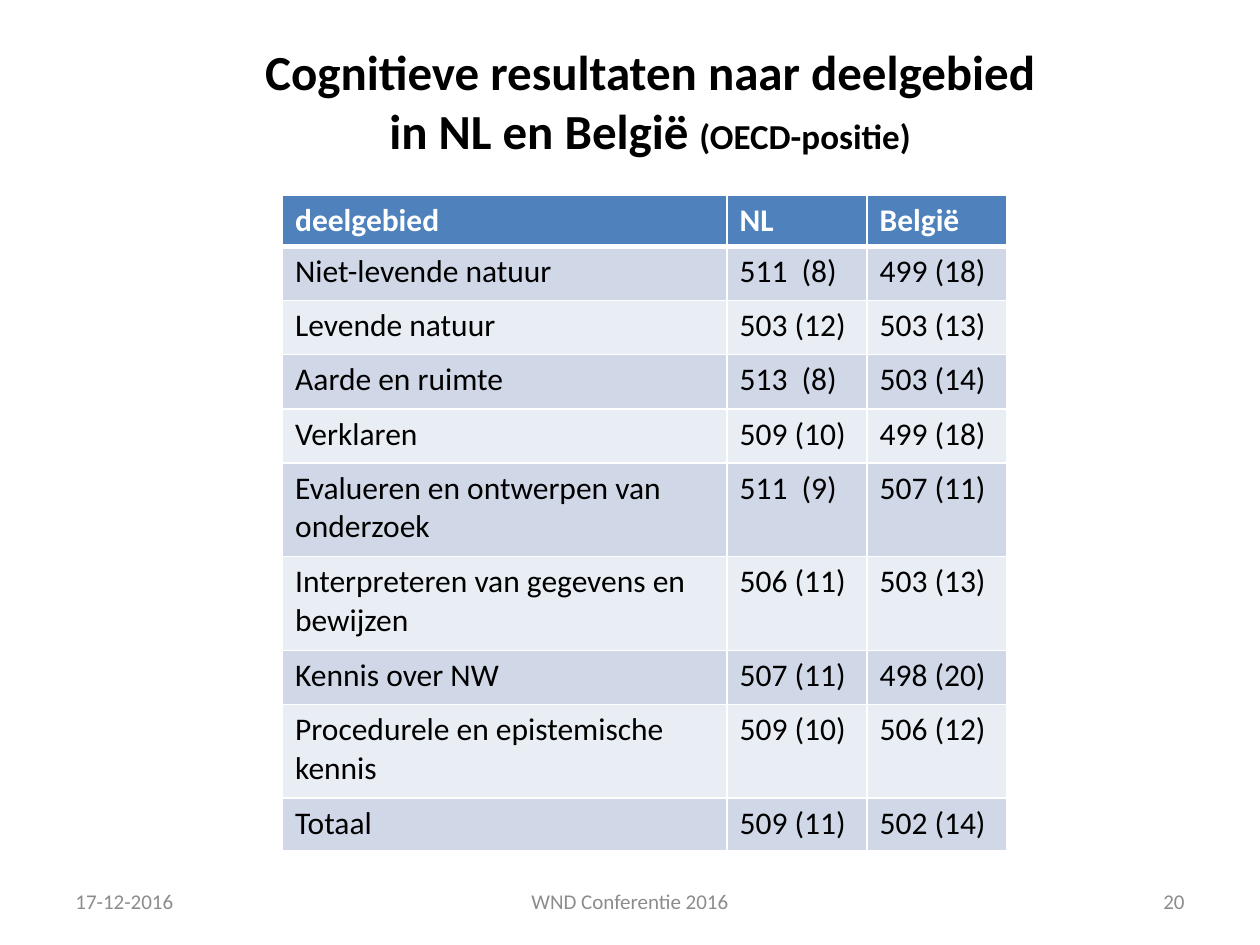
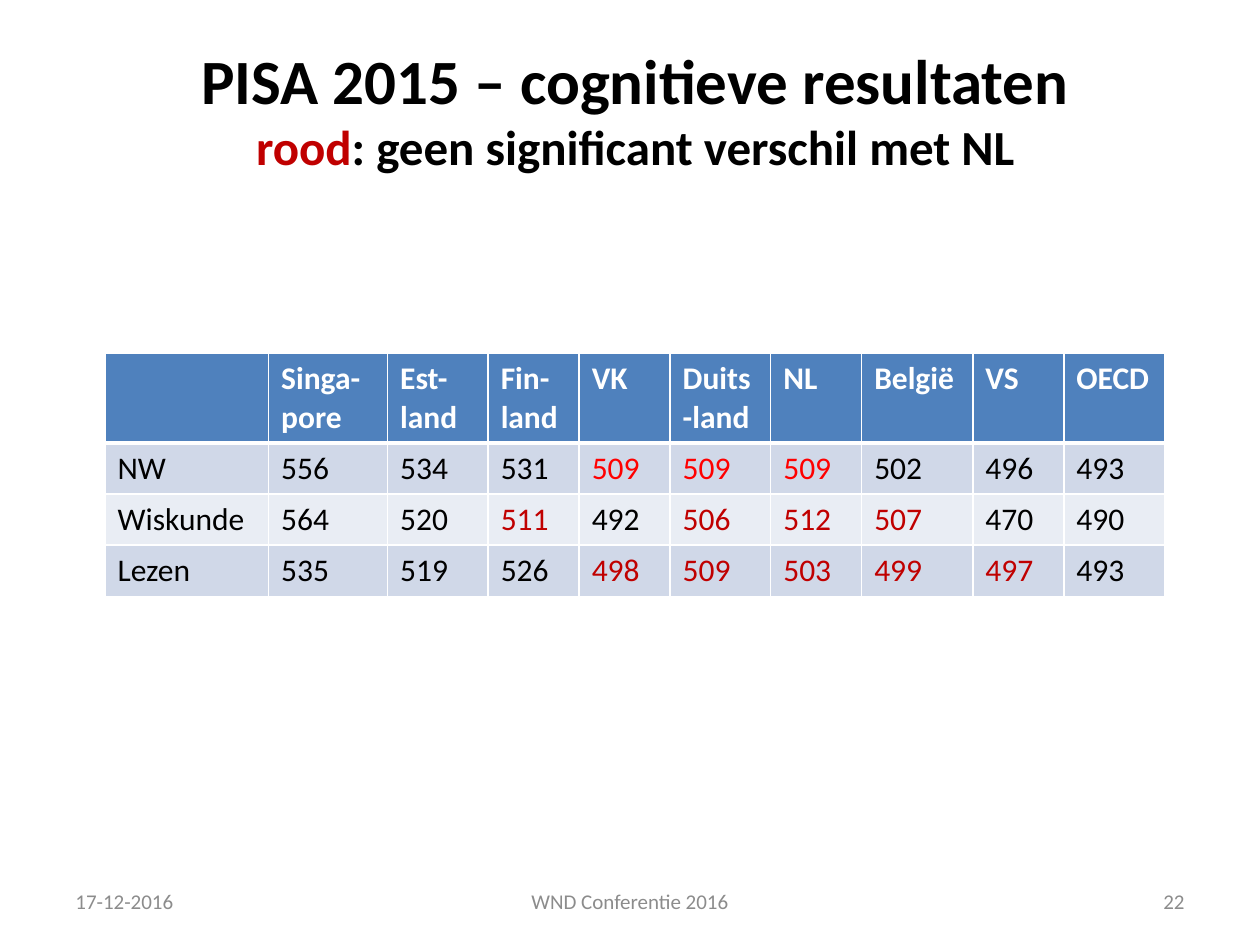
import pptx
import pptx.util
import pptx.dml.color
import pptx.enum.text
import pptx.oxml
import pptx.oxml.ns

Pt = pptx.util.Pt
RGB = pptx.dml.color.RGBColor
ALIGN = pptx.enum.text.PP_ALIGN
MIDDLE = pptx.enum.text.MSO_ANCHOR.MIDDLE
FIXED = pptx.enum.text.MSO_AUTO_SIZE.NONE

BLACK = RGB(0x00, 0x00, 0x00)
WHITE = RGB(0xFF, 0xFF, 0xFF)
GRAY = RGB(0x8C, 0x8C, 0x8C)
BLUE = RGB(0x4F, 0x81, 0xBD)
DARK = RGB(0xD0, 0xD8, 0xE8)
LIGHT = RGB(0xE9, 0xED, 0xF4)
RED = RGB(0xC0, 0x00, 0x00)
BRIGHT = RGB(0xFF, 0x00, 0x00)


def write(frame, text, size=18, color=BLACK, bold=False, align=ALIGN.LEFT, fresh=False):
    para = frame.add_paragraph() if fresh else frame.paragraphs[-1]
    para.alignment = align
    for index, line in enumerate(text.split("\n")):
        if index:
            para.add_line_break()
        if line:
            run = para.add_run()
            run.text = line
            run.font.name = "Calibri"
            run.font.size = Pt(size)
            run.font.bold = bold
            run.font.color.rgb = color


def edge(cell, row):
    props = cell._tc.get_or_add_tcPr()
    widths = {"L": 1, "R": 1, "T": 3 if row == 1 else 1, "B": 3 if row == 0 else 1}
    for side, width in widths.items():
        props.append(pptx.oxml.parse_xml(
            f'<a:ln{side} {pptx.oxml.ns.nsdecls("a")} w="{Pt(width)}">'
            f'<a:solidFill><a:srgbClr val="{WHITE}"/></a:solidFill></a:ln{side}>'))


areas = [
    ["deelgebied", "NL", "België"],
    ["Niet-levende natuur", "511  (8)", "499 (18)"],
    ["Levende natuur", "503 (12)", "503 (13)"],
    ["Aarde en ruimte", "513  (8)", "503 (14)"],
    ["Verklaren", "509 (10)", "499 (18)"],
    ["Evalueren en ontwerpen van onderzoek", "511  (9)", "507 (11)"],
    ["Interpreteren van gegevens en bewijzen", "506 (11)", "503 (13)"],
    ["Kennis over NW", "507 (11)", "498 (20)"],
    ["Procedurele en epistemische kennis", "509 (10)", "506 (12)"],
    ["Totaal", "509 (11)", "502 (14)"],
]
lands = [
    ["", "Singa-\npore", "Est-land", "Fin-land", "VK", "Duits-land", "NL", "België", "VS", "OECD"],
    ["NW", "556", "534", "531", "509", "509", "509", "502", "496", "493"],
    ["Wiskunde", "564", "520", "511", "492", "506", "512", "507", "470", "490"],
    ["Lezen", "535", "519", "526", "498", "509", "503", "499", "497", "493"],
]
marks = {1: (BRIGHT, {4, 5, 6}), 2: (RED, {3, 5, 6, 7}), 3: (RED, {4, 5, 6, 7, 8})}

pages = [
    dict(number="20", title=(54, 26, 635, 62.5),
         parts=[("Cognitieve resultaten naar deelgebied\nin NL en België ", 28, BLACK),
                ("(OECD-positie)", 20, BLACK)],
         origin=(161.5, 111.5), data=areas, marks={},
         cols=[254, 80, 80], rows=[29, 31, 31, 31, 31, 53.5, 53.5, 31, 53.5, 30]),
    dict(number="22", title=(48, 43, 630, 38),
         parts=[("PISA 2015 – cognitieve resultaten\n", 36, BLACK),
                ("rood", 28, RED),
                (": geen significant verschil met NL", 28, BLACK)],
         origin=(60, 202), data=lands, marks=marks,
         cols=[93.5, 68, 57.5, 52, 52, 57.5, 52, 63.5, 52, 57.5],
         rows=[51, 29.2, 29.2, 29.2]),
]

deck = pptx.Presentation()
deck.slide_width, deck.slide_height = Pt(720), Pt(540)

for page in pages:
    slide = deck.slides.add_slide(deck.slide_layouts[5])
    title = slide.shapes.title
    title.left, title.top, title.width, title.height = map(Pt, page["title"])
    title.text_frame.auto_size = FIXED
    title.text_frame.vertical_anchor = MIDDLE
    for text, size, color in page["parts"]:
        write(title.text_frame, text, size=size, color=color, bold=True, align=ALIGN.CENTER)

    data, cols, rows = page["data"], page["cols"], page["rows"]
    left, top = page["origin"]
    table = slide.shapes.add_table(len(rows), len(cols), Pt(left), Pt(top),
                                   Pt(sum(cols)), Pt(sum(rows))).table
    for col, width in enumerate(cols):
        table.columns[col].width = Pt(width)
    for row, height in enumerate(rows):
        table.rows[row].height = Pt(height)
        tint, chosen = page["marks"].get(row, (BLACK, set()))
        for col, text in enumerate(data[row]):
            cell = table.cell(row, col)
            edge(cell, row)
            cell.fill.solid()
            cell.fill.fore_color.rgb = BLUE if row == 0 else DARK if row % 2 else LIGHT
            color = WHITE if row == 0 else tint if col in chosen else BLACK
            for index, line in enumerate(text.split("\n")):
                write(cell.text_frame, line, color=color, bold=row == 0, fresh=index > 0)

    for left, width, text, align in [
        (36, 168, "17-12-2016", ALIGN.LEFT),
        (246, 228, "WND Conferentie 2016", ALIGN.CENTER),
        (516, 168, page["number"], ALIGN.RIGHT),
    ]:
        frame = slide.shapes.add_textbox(Pt(left), Pt(500.5), Pt(width), Pt(28.8)).text_frame
        frame.word_wrap = True
        frame.vertical_anchor = MIDDLE
        write(frame, text, size=12, color=GRAY, align=align)

deck.save("out.pptx")
